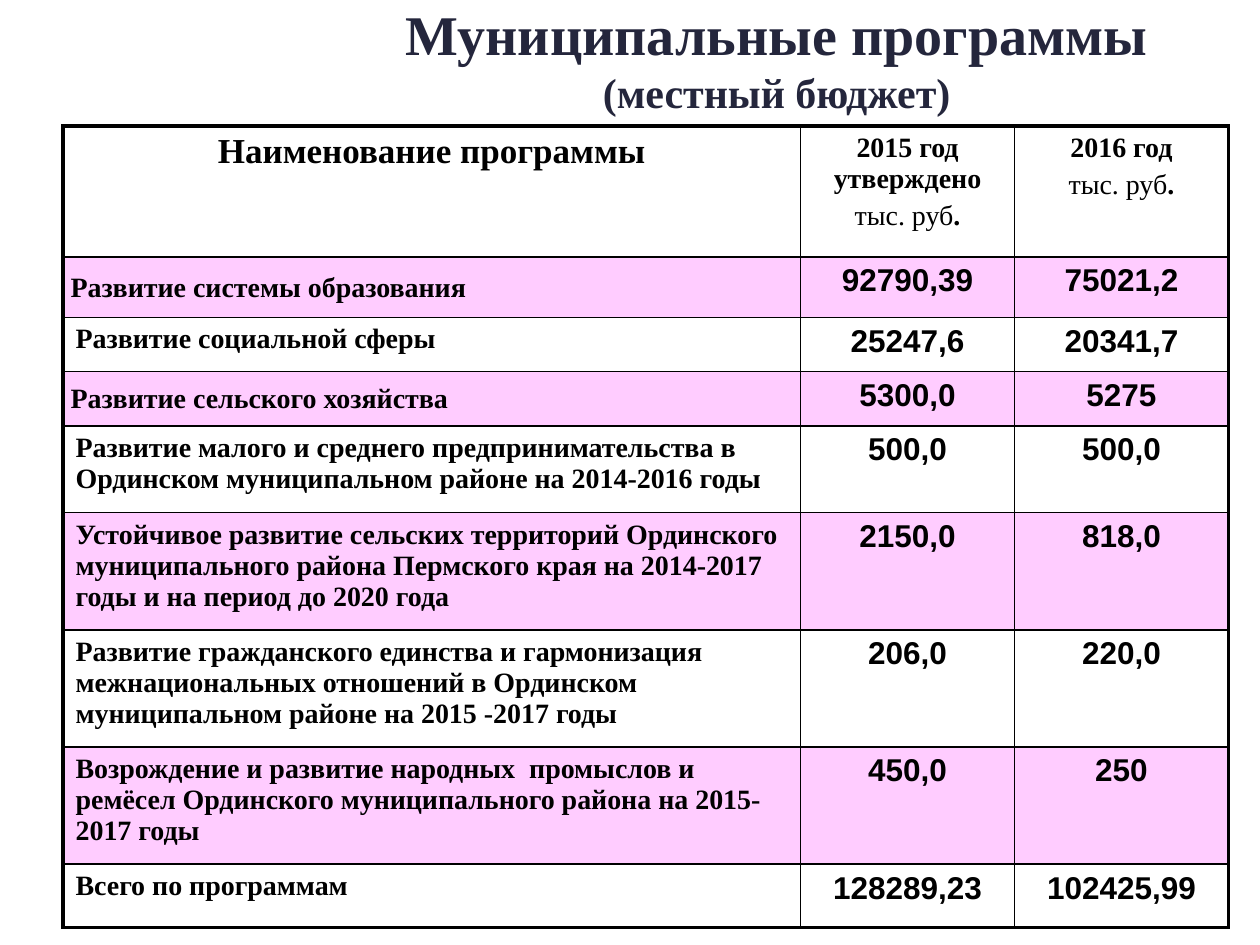
from dataclasses import dataclass

from lxml.etree import SubElement
from pptx import Presentation
from pptx.dml.color import RGBColor
from pptx.enum.shapes import MSO_SHAPE
from pptx.enum.text import MSO_ANCHOR, PP_ALIGN
from pptx.oxml.ns import qn
from pptx.util import Emu, Inches, Pt


@dataclass(frozen=True)
class Theme:
    serif: str = "Times New Roman"
    sans: str = "Arial"
    ink: str = "000000"
    title: str = "24263C"
    white: str = "FFFFFF"
    pink: str = "FFCCFF"
    title_size: int = 32
    subtitle_size: int = 24
    head_size: int = 20
    value_size: int = 18
    body_size: int = 16
    thin: float = 1
    thick: float = 2.25


THEME = Theme()
GRID_COLS, GRID_ROWS = 40, 30
TITLE_BOX = (11, 0.68, 27.32, 2.32)
TABLE_BOX = (2, 4, 37, 25.44)
COL_SHARES = (5.86, 1.7, 1.7)
ROW_SHARES = (1.04, 0.48, 0.43, 0.43, 0.69, 0.93, 0.93, 0.93, 0.5)

YEARS = ("2015 год утверждено", "2016 год")
PROGRAMS = (
    ("Развитие системы образования", "92790,39", "75021,2"),
    ("Развитие социальной сферы", "25247,6", "20341,7"),
    ("Развитие сельского хозяйства", "5300,0", "5275"),
    ("Развитие малого и среднего предпринимательства в Ординском "
     "муниципальном районе на 2014-2016 годы", "500,0", "500,0"),
    ("Устойчивое развитие сельских территорий Ординского муниципального района "
     "Пермского края на 2014-2017 годы и на период до 2020 года", "2150,0", "818,0"),
    ("Развитие гражданского единства и гармонизация межнациональных отношений "
     "в Ординском муниципальном районе на 2015 -2017 годы", "206,0", "220,0"),
    ("Возрождение и развитие народных  промыслов и ремёсел Ординского "
     "муниципального района на 2015-2017 годы", "450,0", "250"),
    ("Всего по программам", "128289,23", "102425,99"),
)
MIDDLE_ROWS = (1, 3)


def place(prs, box):
    """Turn a box in grid units into slide lengths."""
    unit_x, unit_y = prs.slide_width / GRID_COLS, prs.slide_height / GRID_ROWS
    x, y, w, h = box
    return Emu(int(x * unit_x)), Emu(int(y * unit_y)), Emu(int(w * unit_x)), Emu(int(h * unit_y))


def split(total, shares):
    return [Emu(int(total * share / sum(shares))) for share in shares]


def add_run(p, text, size, font=THEME.serif, color=THEME.ink, bold=True):
    r = p.add_run()
    r.text = text
    r.font.name, r.font.size, r.font.bold = font, Pt(size), bold
    r.font.color.rgb = RGBColor.from_string(color)


def format_paragraph(p, size, align):
    p.alignment = align
    p.space_before = Pt(size * 0.2)


def write_cell(cell, text, size, font=THEME.serif, align=PP_ALIGN.CENTER):
    p = cell.text_frame.paragraphs[0]
    format_paragraph(p, size, align)
    add_run(p, text, size, font)


def fill_solid(obj, color):
    obj.fill.solid()
    obj.fill.fore_color.rgb = RGBColor.from_string(color)


def set_borders(cell, widths):
    """Draw the left, right, top and bottom lines, which must precede the fill."""
    tc_pr = cell._tc.get_or_add_tcPr()
    for i, (side, width) in enumerate(zip("LRTB", widths)):
        ln = SubElement(tc_pr, qn(f"a:ln{side}"), w=str(Pt(width)))
        SubElement(SubElement(ln, qn("a:solidFill")), qn("a:srgbClr"), val=THEME.ink)
        tc_pr.insert(i, ln)


def add_title(slide, box):
    sp = slide.shapes.add_shape(MSO_SHAPE.RECTANGLE, *box)
    sp.shadow.inherit = False
    fill_solid(sp, THEME.white)
    sp.line.fill.background()
    tf = sp.text_frame
    tf.word_wrap = True
    tf.vertical_anchor = MSO_ANCHOR.MIDDLE
    p = tf.paragraphs[0]
    p.alignment = PP_ALIGN.CENTER
    add_run(p, "Муниципальные программы ", THEME.title_size, color=THEME.title)
    add_run(p, "(местный бюджет)", THEME.subtitle_size, color=THEME.title)


def write_header(table):
    write_cell(table.cell(0, 0), "Наименование программы", THEME.head_size)
    for col, year in enumerate(YEARS, start=1):
        cell = table.cell(0, col)
        write_cell(cell, year, THEME.body_size)
        p = cell.text_frame.add_paragraph()
        format_paragraph(p, THEME.body_size, PP_ALIGN.CENTER)
        add_run(p, "тыс. руб", THEME.body_size, bold=False)
        add_run(p, ".", THEME.body_size)


def write_programs(table):
    for row, (name, *values) in enumerate(PROGRAMS, start=1):
        cell = table.cell(row, 0)
        write_cell(cell, name, THEME.body_size, align=PP_ALIGN.LEFT)
        if row in MIDDLE_ROWS:
            cell.vertical_anchor = MSO_ANCHOR.MIDDLE
            cell.margin_left = Inches(0.06)
            cell.margin_top, cell.margin_bottom = Inches(0.01), 0
        for col, value in enumerate(values, start=1):
            write_cell(table.cell(row, col), value, THEME.value_size, THEME.sans)


def style_table(table):
    """Band the program rows and frame the table with a thick outer line."""
    last_row, last_col = len(ROW_SHARES) - 1, len(COL_SHARES) - 1
    for row in range(last_row + 1):
        for col in range(last_col + 1):
            cell = table.cell(row, col)
            banded = row % 2 == 1
            fill_solid(cell, THEME.pink if banded else THEME.white)
            outer = (col == 0, col == last_col, row == 0, row == last_row)
            set_borders(cell, [THEME.thick if edge else THEME.thin for edge in outer])


def add_program_table(slide, box):
    frame = slide.shapes.add_table(len(ROW_SHARES), len(COL_SHARES), *box)
    table = frame.table
    table.first_row = table.horz_banding = False
    for column, width in zip(table.columns, split(box[2], COL_SHARES)):
        column.width = width
    for row, height in zip(table.rows, split(box[3], ROW_SHARES)):
        row.height = height
    write_header(table)
    write_programs(table)
    style_table(table)


def main():
    prs = Presentation()
    prs.slide_width, prs.slide_height = Inches(10), Inches(7.5)
    slide = prs.slides.add_slide(prs.slide_layouts[6])
    add_title(slide, place(prs, TITLE_BOX))
    add_program_table(slide, place(prs, TABLE_BOX))
    prs.save("out.pptx")


if __name__ == "__main__":
    main()
